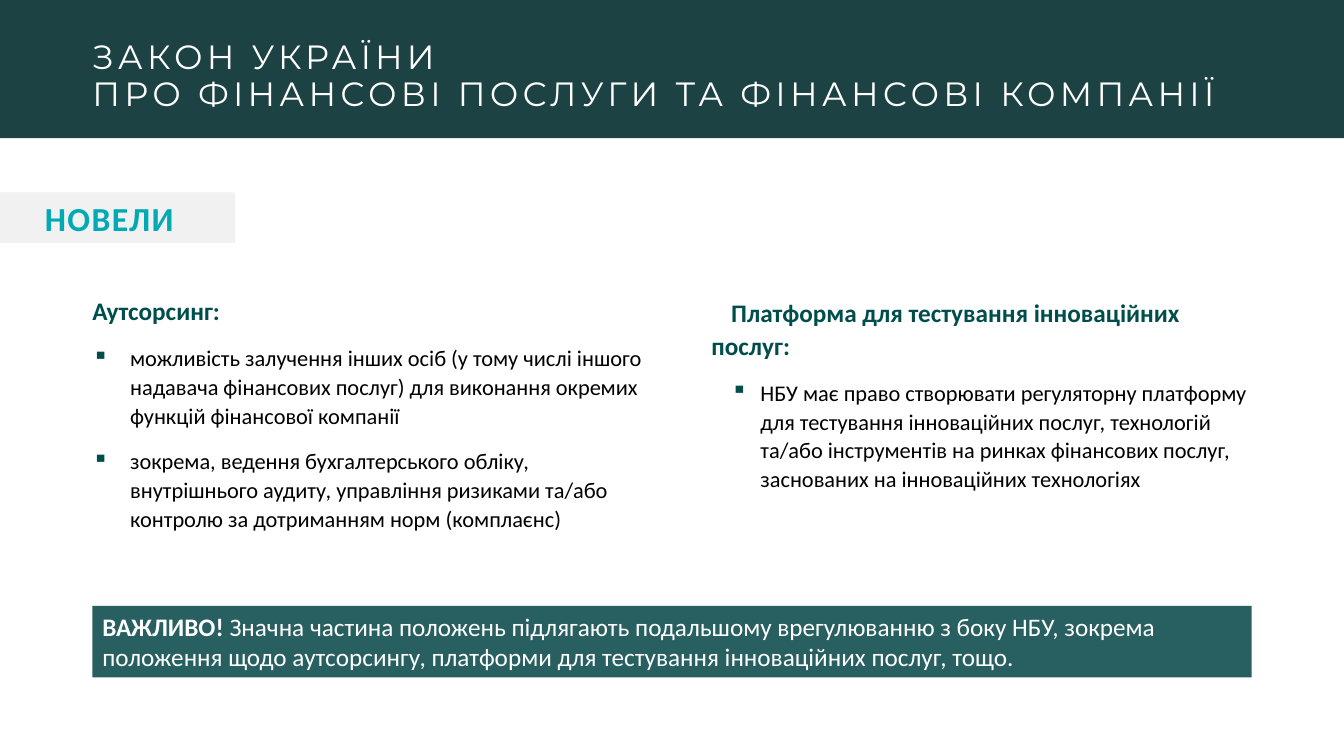
from dataclasses import dataclass

from lxml import etree
from pptx import Presentation
from pptx.dml.color import RGBColor
from pptx.enum.shapes import MSO_SHAPE
from pptx.enum.text import MSO_ANCHOR, PP_ALIGN
from pptx.oxml.ns import qn
from pptx.util import Inches, Pt

RECTANGLE = MSO_SHAPE.RECTANGLE
TOP, MIDDLE = MSO_ANCHOR.TOP, MSO_ANCHOR.MIDDLE
LEFT = PP_ALIGN.LEFT

COLUMNS, ROWS = 160, 90


@dataclass(frozen=True)
class Theme:
    header: str = "1C4243"
    banner: str = "285F60"
    tag: str = "F1F1F1"
    accent: str = "00AAB4"
    heading: str = "004E4C"
    body: str = "000000"
    light: str = "FFFFFF"
    title_font: str = "Montserrat"
    text_font: str = "Calibri"
    title_size: int = 24
    heading_size: int = 18
    body_size: int = 16
    line_spacing: float = 1.07
    gap: int = 6


class SlideBuilder:
    def __init__(self, presentation, theme):
        self.theme = theme
        self.column = presentation.slide_width / COLUMNS
        self.row = presentation.slide_height / ROWS
        self.slide = presentation.slides.add_slide(presentation.slide_layouts[6])

    def place(self, left, top, width, height):
        return (round(left * self.column), round(top * self.row),
                round(width * self.column), round(height * self.row))

    def bar(self, area, color):
        shape = self.slide.shapes.add_shape(RECTANGLE, *self.place(*area))
        shape.shadow.inherit = False
        shape.fill.solid()
        shape.fill.fore_color.rgb = RGBColor.from_string(color)
        shape.line.fill.background()
        frame = shape.text_frame
        frame.word_wrap = True
        frame.vertical_anchor = MIDDLE
        return frame

    def text_box(self, area, anchor=TOP):
        frame = self.slide.shapes.add_textbox(*self.place(*area)).text_frame
        frame.word_wrap = True
        frame.vertical_anchor = anchor
        frame.margin_left = frame.margin_right = 0
        frame.margin_top = frame.margin_bottom = 0
        return frame

    def set_text(self, paragraph, text, size, color, font=None, bold=False, tracking=0):
        paragraph.alignment = LEFT
        paragraph.text = text
        paragraph.font.name = font or self.theme.text_font
        paragraph.font.size = Pt(size)
        paragraph.font.bold = bold
        paragraph.font.color.rgb = RGBColor.from_string(color)
        if tracking:
            for run in paragraph.runs:
                run._r.get_or_add_rPr().set("spc", str(tracking * 100))

    def indent(self, paragraph, margin, first_line):
        properties = paragraph._p.get_or_add_pPr()
        properties.set("marL", str(round(margin * self.column)))
        properties.set("indent", str(round(first_line * self.column)))
        return properties

    def bullet(self, properties):
        color = etree.SubElement(properties, qn("a:buClr"))
        etree.SubElement(color, qn("a:srgbClr")).set("val", self.theme.heading)
        etree.SubElement(properties, qn("a:buChar")).set("char", "▪")

    def topic(self, area, heading, heading_indent, points, point_indent):
        theme = self.theme
        frame = self.text_box(area)
        opening = frame.paragraphs[0]
        opening.line_spacing = theme.line_spacing
        opening.space_after = Pt(theme.gap)
        self.indent(opening, *heading_indent)
        self.set_text(opening, heading, theme.heading_size, theme.heading, bold=True)
        for point in points:
            item = frame.add_paragraph()
            item.line_spacing = theme.line_spacing
            item.space_before = item.space_after = Pt(theme.gap)
            self.bullet(self.indent(item, *point_indent))
            self.set_text(item, point, theme.body_size, theme.body)

    def title(self, area, text):
        theme = self.theme
        heading = self.text_box(area, MIDDLE).paragraphs[0]
        heading.line_spacing = 0.9
        self.set_text(heading, text, theme.title_size, theme.light,
                      font=theme.title_font, tracking=3)

    def tag(self, area, text, inset):
        theme = self.theme
        frame = self.bar(area, theme.tag)
        frame.margin_left = round(inset * self.column)
        self.set_text(frame.paragraphs[0], text, theme.title_size, theme.accent,
                      bold=True, tracking=1)

    def notice(self, area, lead, text):
        theme = self.theme
        message = self.bar(area, theme.banner).paragraphs[0]
        self.set_text(message, lead, theme.heading_size, theme.light)
        message.runs[0].font.bold = True
        message.add_run().text = text


def main():
    presentation = Presentation()
    presentation.slide_width = Inches(13.33)
    presentation.slide_height = Inches(7.5)
    theme = Theme()
    law = SlideBuilder(presentation, theme)

    margin, content, gutter = 11, 138, 4.68
    topic_width = (content - gutter) / 2
    platform_left = margin + topic_width + gutter

    law.bar((0, 0, COLUMNS, 16.44), theme.header)
    law.title((margin, 4.8, content, 8.76),
              "ЗАКОН УКРАЇНИ\vПРО ФІНАНСОВІ ПОСЛУГИ ТА ФІНАНСОВІ КОМПАНІЇ")
    law.topic(
        (margin, 34.95, topic_width, 30), "Аутсорсинг:", (0, 0),
        ["можливість залучення інших осіб (у тому числі іншого надавача "
         "фінансових послуг) для виконання окремих функцій фінансової компанії",
         "зокрема, ведення бухгалтерського обліку, внутрішнього аудиту, "
         "управління ризиками та/або контролю за дотриманням норм (комплаєнс)"],
        (4.5, -4.5))
    law.topic(
        (platform_left, 35.2, topic_width, 30),
        "Платформа для тестування інноваційних послуг:", (2.36, 2.36),
        ["НБУ має право створювати регуляторну платформу для тестування "
         "інноваційних послуг, технологій та/або інструментів на ринках "
         "фінансових послуг, заснованих на інноваційних технологіях"],
        (8.2, -3.5))
    law.notice(
        (margin, 72.12, content, 8.52), "ВАЖЛИВО! ",
        "Значна частина положень підлягають подальшому врегулюванню з боку НБУ, "
        "зокрема положення щодо аутсорсингу, платформи для тестування "
        "інноваційних послуг, тощо.")
    law.tag((0, 22.92, 28, 6), "НОВЕЛИ", 5.35)

    presentation.save("out.pptx")


if __name__ == "__main__":
    main()
